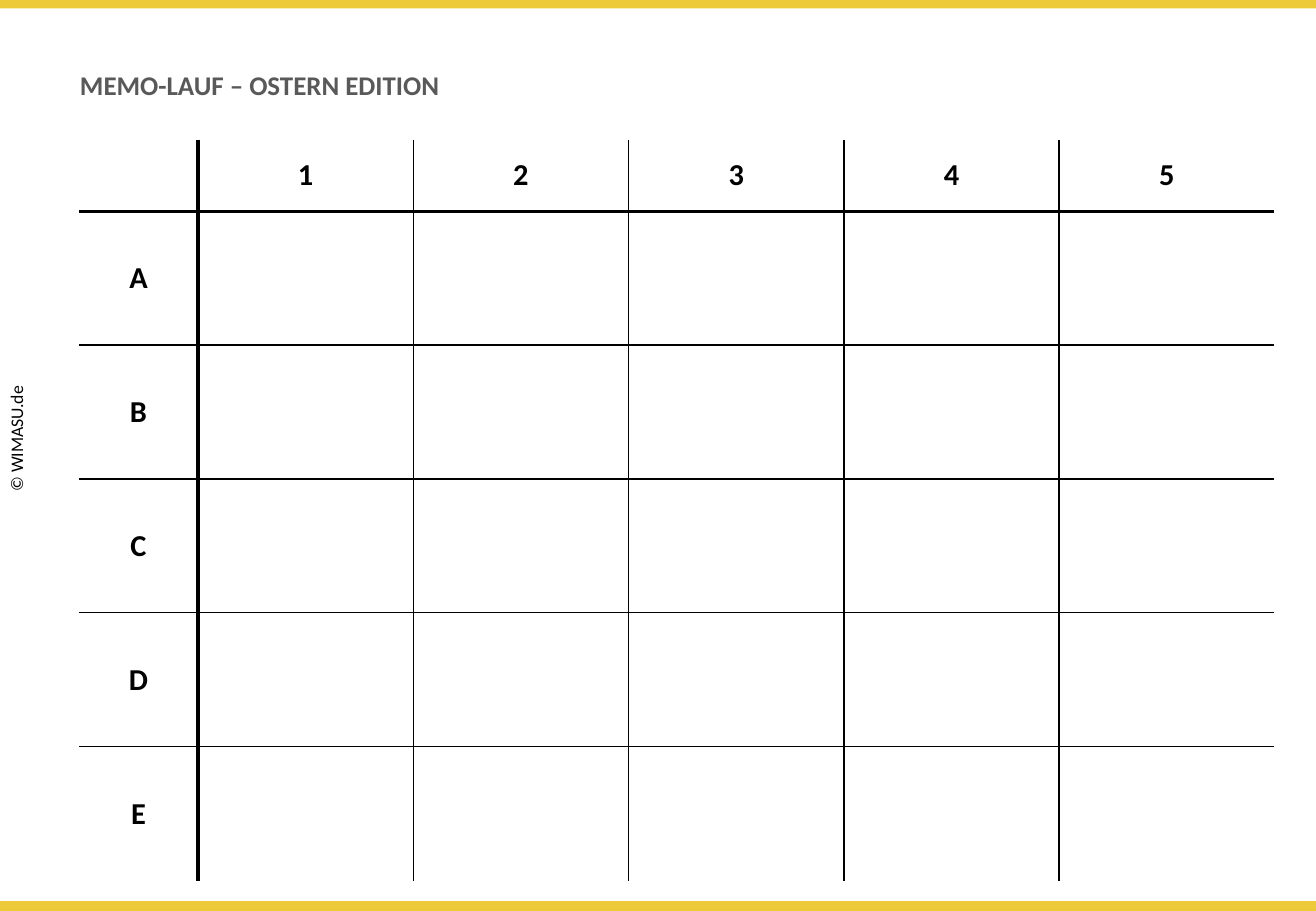
from pptx import Presentation
from pptx.dml.color import RGBColor
from pptx.enum.shapes import MSO_SHAPE
from pptx.enum.text import MSO_ANCHOR as Anchor, MSO_AUTO_SIZE as AutoSize, PP_ALIGN as Align
from pptx.oxml.ns import qn
from pptx.util import Inches, Pt
from lxml.etree import SubElement

GOLD, GREY, BLACK, WHITE = "ECCA3A", "595959", "000000", "FFFFFF"
THIN, HEADER_RULE, LABEL_RULE = 1, 2, 2.25


def rgb(value):
    return RGBColor.from_string(value)


class Sheet:
    """Lays out one slide on a grid of 100 columns by 100 rows."""

    font = "Calibri"

    def __init__(self, width, height):
        self.deck = Presentation()
        self.deck.slide_width, self.deck.slide_height = Inches(width), Inches(height)
        self.slide = self.deck.slides.add_slide(self.deck.slide_layouts[6])

    def cols(self, count):
        return round(self.deck.slide_width * count / 100)

    def rows(self, count):
        return round(self.deck.slide_height * count / 100)

    def area(self, left, top, width, height):
        return self.cols(left), self.rows(top), self.cols(width), self.rows(height)

    def add_words(self, frame, words, size, color=BLACK, bold=False):
        paragraph = frame.paragraphs[0]
        run = paragraph.add_run()
        run.text = words
        run.font.name, run.font.size, run.font.bold = self.font, Pt(size), bold
        run.font.color.rgb = rgb(color)
        return paragraph

    def bar(self, top, height, color):
        band = self.slide.shapes.add_shape(MSO_SHAPE.RECTANGLE, *self.area(0, top, 100, height))
        band.shadow.inherit = False
        band.fill.solid()
        band.fill.fore_color.rgb = rgb(color)
        band.line.fill.background()

    def title(self, words, *place):
        frame = self.slide.shapes.add_textbox(*self.area(*place)).text_frame
        frame.word_wrap = True
        frame.vertical_anchor = Anchor.BOTTOM
        self.add_words(frame, words, 16, GREY, bold=True).line_spacing = 0.9

    def side_note(self, words, *place):
        note = self.slide.shapes.add_textbox(*self.area(*place))
        note.rotation = 270
        note.text_frame.word_wrap = False
        note.text_frame.auto_size = AutoSize.SHAPE_TO_FIT_TEXT
        self.add_words(note.text_frame, words, 10.5)

    def border(self, cell, side, weight):
        edge = SubElement(cell._tc.get_or_add_tcPr(), qn(f"a:ln{side}"))
        if not weight:
            SubElement(edge, qn("a:noFill"))
            return
        edge.set("w", str(int(Pt(weight))))
        SubElement(SubElement(edge, qn("a:solidFill")), qn("a:srgbClr"), val=BLACK)

    def shade(self, cell, tinted):
        if not tinted:
            cell.fill.background()
            return
        cell.fill.solid()
        cell.fill.fore_color.rgb = rgb(WHITE)
        color = cell._tc.tcPr.find(qn("a:solidFill")).find(qn("a:srgbClr"))
        SubElement(color, qn("a:alpha"), val="20000")

    def board(self, left, top, numbers, letters, widths, heights):
        across, down = len(numbers) + 1, len(letters) + 1
        place = self.area(left, top, sum(widths), sum(heights))
        grid = self.slide.shapes.add_table(down, across, *place).table
        grid.first_row = grid.horz_banding = False
        for column, width in zip(grid.columns, widths):
            column.width = self.cols(width)
        for row, height in zip(grid.rows, heights):
            row.height = self.rows(height)

        # Rules only between cells, heavier next to the labels
        upright = [0, LABEL_RULE] + [THIN] * (across - 2) + [0]
        level = [0, HEADER_RULE] + [THIN] * (down - 2) + [0]
        for r in range(down):
            for c in range(across):
                cell = grid.cell(r, c)
                for side, weight in (("L", upright[c]), ("R", upright[c + 1]),
                                     ("T", level[r]), ("B", level[r + 1])):
                    self.border(cell, side, weight)
                self.shade(cell, r % 2 == 1)

        # Labels in the first row and the first column
        labels = [(0, c, number) for c, number in enumerate(numbers, 1)]
        labels += [(r, 0, letter) for r, letter in enumerate(letters, 1)]
        for r, c, label in labels:
            cell = grid.cell(r, c)
            cell.vertical_anchor = Anchor.MIDDLE
            self.add_words(cell.text_frame, label, 18, bold=True).alignment = Align.CENTER


def main():
    sheet = Sheet(10.83, 7.5)

    # Gold bands at the top and bottom edges
    for band_top in (-0.27, 98.93):
        sheet.bar(band_top, 1.2, GOLD)

    # Heading and copyright line
    sheet.title("MEMO-LAUF – OSTERN EDITION", 5.17, 5.73, 84.03, 6)
    sheet.side_note("© WIMASU.de", -3.88, 45.87, 10.34, 3.87)

    # Memo board
    sheet.board(6, 15.33, "12345", "ABCDE",
                widths=[9.05] + [16.36] * 5, heights=[7.84] + [14.7] * 5)

    sheet.deck.save("out.pptx")


if __name__ == "__main__":
    main()
